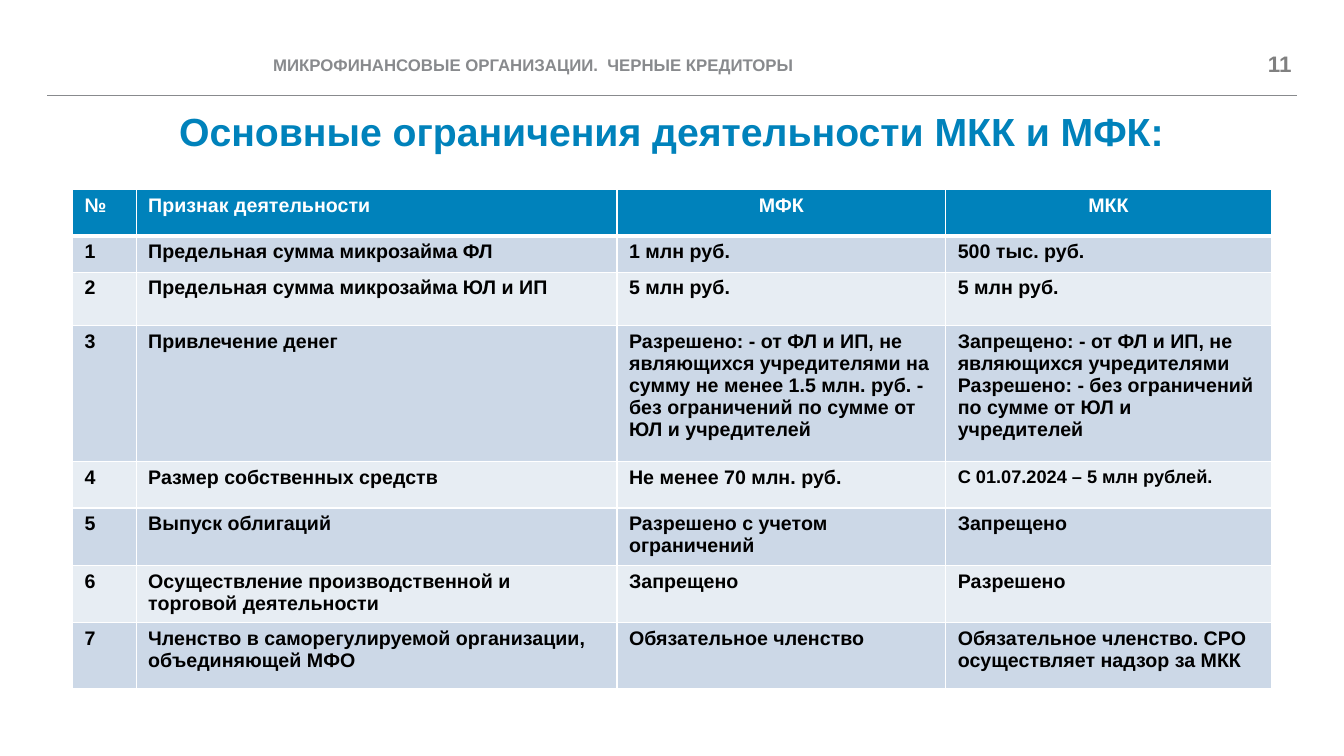
from dataclasses import dataclass

from lxml.etree import SubElement
from pptx import Presentation
from pptx.dml.color import RGBColor
from pptx.enum.text import MSO_ANCHOR, PP_ALIGN
from pptx.oxml.ns import qn
from pptx.util import Inches, Pt


@dataclass(frozen=True)
class Theme:
    font: str = "Arial"
    blue: str = "0082BB"
    band_dark: str = "CCD8E7"
    band_light: str = "E7EDF3"
    white: str = "FFFFFF"
    black: str = "000000"
    gray: str = "888A8D"
    number_gray: str = "808080"
    title_size: float = 28
    number_size: float = 16
    table_size: float = 14
    small_size: float = 13
    header_size: float = 12


@dataclass(frozen=True)
class Label:
    text: str
    box: tuple[float, float, float, float]
    size: float
    color: str
    align: PP_ALIGN = PP_ALIGN.LEFT
    anchor: MSO_ANCHOR = MSO_ANCHOR.TOP
    inset: tuple[float, float] = (0, 0)
    spacing: float = 1.0


@dataclass(frozen=True)
class Row:
    height: float
    texts: tuple[str, str, str, str]


T = Theme()

LABELS = [
    Label("11", (12.28, 0.38, 0.53, 0.51), T.number_size, T.number_gray,
          PP_ALIGN.RIGHT, MSO_ANCHOR.MIDDLE),
    Label("Основные ограничения деятельности МКК и МФК:", (0.72, 1.12, 11.88, 0.76),
          T.title_size, T.blue, PP_ALIGN.CENTER, spacing=0.9),
    Label("МИКРОФИНАНСОВЫЕ ОРГАНИЗАЦИИ.  ЧЕРНЫЕ КРЕДИТОРЫ", (2.58, 0.47, 9.23, 0.35),
          T.header_size, T.gray, inset=(0.13, 0.07)),
]

COL_WIDTHS = [0.63, 4.77, 3.26, 3.23]
CAPITAL_NOTE = "С 01.07.2024 – 5 млн рублей."
ROWS = [
    Row(0.46, ("№", "Признак деятельности", "МФК", "МКК")),
    Row(0.36, ("1", "Предельная сумма микрозайма ФЛ", "1 млн руб.", "500 тыс. руб.")),
    Row(0.53, ("2", "Предельная сумма микрозайма ЮЛ и ИП", "5 млн руб.", "5 млн руб.")),
    Row(1.35, ("3", "Привлечение денег",
               "Разрешено: - от ФЛ и ИП, не являющихся учредителями на сумму "
               "не менее 1.5 млн. руб. - без ограничений по сумме от ЮЛ и учредителей",
               "Запрещено: - от ФЛ и ИП, не являющихся учредителями "
               "Разрешено: - без ограничений по сумме от ЮЛ и учредителей")),
    Row(0.46, ("4", "Размер собственных средств", "Не менее 70 млн. руб.", CAPITAL_NOTE)),
    Row(0.54, ("5", "Выпуск облигаций", "Разрешено с учетом ограничений", "Запрещено")),
    Row(0.54, ("6", "Осуществление производственной и торговой деятельности",
               "Запрещено", "Разрешено")),
    Row(0.66, ("7", "Членство в саморегулируемой организации, объединяющей МФО",
               "Обязательное членство",
               "Обязательное членство. СРО осуществляет надзор за МКК")),
]


def set_attrs(obj, values: dict) -> None:
    for name, value in values.items():
        setattr(obj, name, value)


def write(tf, text: str, size: float, color: str, align: PP_ALIGN,
          spacing: float = 1.0) -> None:
    p = tf.paragraphs[0]
    set_attrs(p, {"alignment": align, "line_spacing": spacing})
    r = p.add_run()
    r.text = text
    set_attrs(r.font, {"name": T.font, "size": Pt(size), "bold": True})
    r.font.color.rgb = RGBColor.from_string(color)


def margins(dx: float, dy: float) -> dict:
    return {"margin_left": Inches(dx), "margin_right": Inches(dx),
            "margin_top": Inches(dy), "margin_bottom": Inches(dy)}


def add_label(s, label: Label) -> None:
    tf = s.shapes.add_textbox(*map(Inches, label.box)).text_frame
    set_attrs(tf, {"word_wrap": True, "vertical_anchor": label.anchor,
                   **margins(*label.inset)})
    write(tf, label.text, label.size, label.color, label.align, label.spacing)


def add_borders(cell, bottom: float) -> None:
    tc_pr = cell._tc.get_or_add_tcPr()
    widths = {"a:lnL": 1, "a:lnR": 1, "a:lnT": 1, "a:lnB": bottom}
    for i, (tag, width) in enumerate(widths.items()):
        ln = SubElement(tc_pr, qn(tag), w=str(Pt(width)))
        SubElement(SubElement(ln, qn("a:solidFill")), qn("a:srgbClr"), val=T.white)
        tc_pr.insert(i, ln)  # borders come before the fill


def add_limits_table(s) -> None:
    height = sum(row.height for row in ROWS)
    table = s.shapes.add_table(
        len(ROWS), len(COL_WIDTHS), Inches(0.72), Inches(1.88),
        Inches(sum(COL_WIDTHS)), Inches(height)).table
    for col, width in zip(table.columns, COL_WIDTHS):
        col.width = Inches(width)
    for i, row in enumerate(ROWS):
        table.rows[i].height = Inches(row.height)
        header = i == 0
        band = T.band_dark if i % 2 else T.band_light
        for j, text in enumerate(row.texts):
            cell = table.cell(i, j)
            set_attrs(cell, margins(0.12, 0.05))
            cell.fill.solid()
            cell.fill.fore_color.rgb = RGBColor.from_string(T.blue if header else band)
            write(cell.text_frame, text,
                  T.small_size if text == CAPITAL_NOTE else T.table_size,
                  T.white if header else T.black,
                  PP_ALIGN.CENTER if header and j > 1 else PP_ALIGN.LEFT)
            add_borders(cell, 3 if header else 1)


def add_rule(s) -> None:
    sp = s.shapes.add_connector(1, Inches(0.47), Inches(0.95), Inches(12.86), Inches(0.95))
    sp.line.color.rgb = RGBColor.from_string(T.gray)
    sp.line.width = Pt(0.5)
    SubElement(sp._element.spPr, qn("a:effectLst"))


def main() -> None:
    prs = Presentation()
    set_attrs(prs, {"slide_width": Inches(13.33), "slide_height": Inches(7.5)})
    s = prs.slides.add_slide(prs.slide_layouts[6])
    # Header rule, title and page number
    add_rule(s)
    for label in LABELS:
        add_label(s, label)
    # Comparison of limits
    add_limits_table(s)
    prs.save("out.pptx")


if __name__ == "__main__":
    main()
